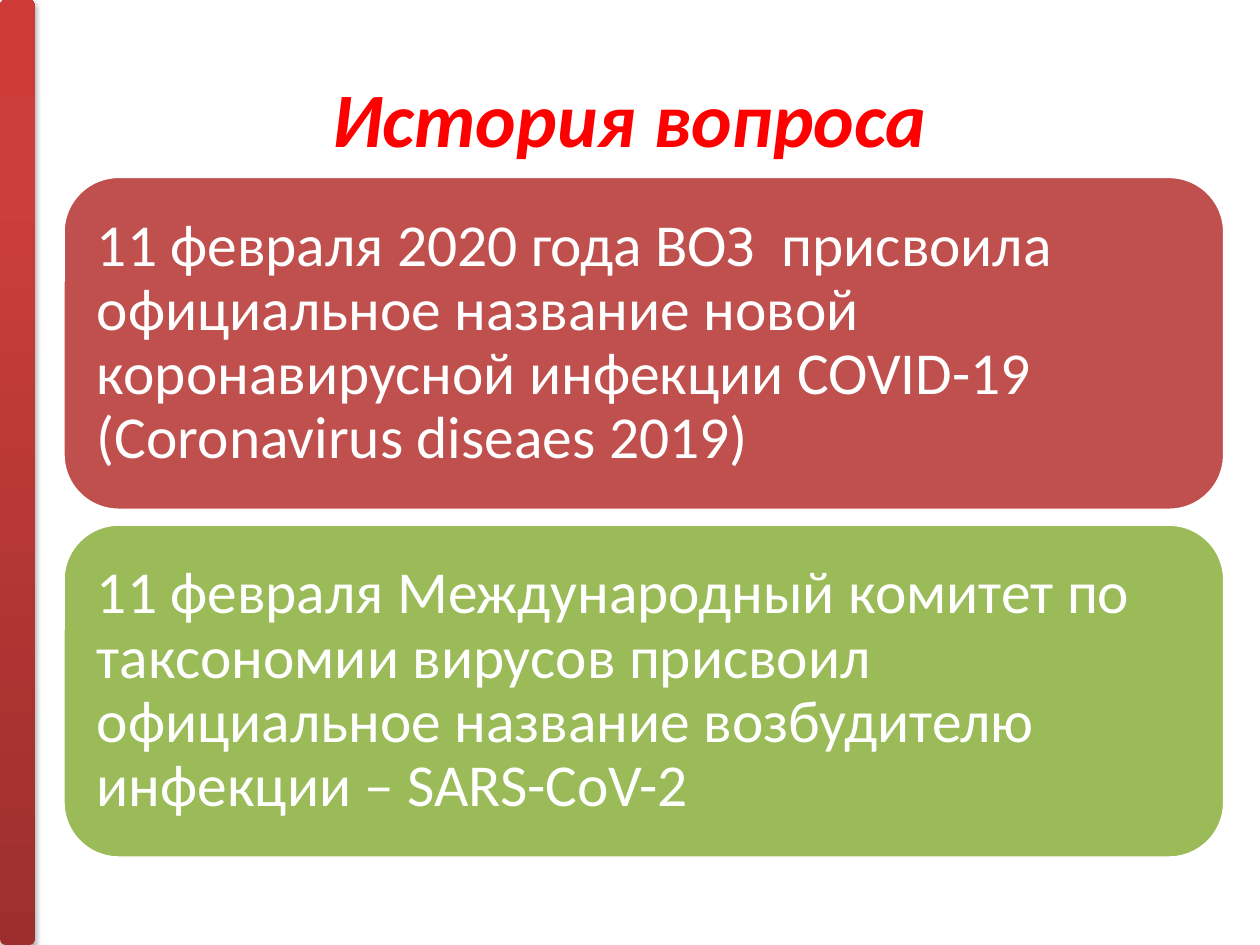
import copy

import lxml.etree
import pptx
import pptx.dml.color
import pptx.enum.shapes
import pptx.enum.text
import pptx.oxml
import pptx.oxml.ns
import pptx.util

WIDE, HIGH = 10, 7.5
FONT = "Calibri"
CARDS = [
    ("C0504D", "11 февраля 2020 года ВОЗ  присвоила официальное название новой "
               "коронавирусной инфекции COVID-19 (Coronavirus diseaes 2019)"),
    ("9BBB59", "11 февраля Международный комитет по таксономии вирусов присвоил "
               "официальное название возбудителю инфекции – SARS-CoV-2"),
]
STOPS = [(0, "9C2F2D"), (0.8, "CB3E3A"), (1, "CE3B37")]
SHADE = (
    '<a:outerShdw xmlns:a="http://schemas.openxmlformats.org/drawingml/2006/main" '
    'blurRad="40000" dist="23000" dir="5400000" rotWithShape="0">'
    '<a:srgbClr val="000000"><a:alpha val="35000"/></a:srgbClr></a:outerShdw>'
)


def tint(code):
    """Turn a hex string into a colour."""
    return pptx.dml.color.RGBColor.from_string(code)


def area(*box):
    """Turn inches into lengths."""
    return [pptx.util.Inches(side) for side in box]


def write(frame, text, size, code, align):
    """Set one wrapped, vertically centred paragraph and return it."""
    frame.word_wrap = True
    frame.vertical_anchor = pptx.enum.text.MSO_ANCHOR.MIDDLE
    para = frame.paragraphs[0]
    para.text = text
    para.alignment = align
    para.font.name = FONT
    para.font.size = pptx.util.Pt(size)
    para.font.color.rgb = tint(code)
    return para


def block(slide, *box):
    """Add a rounded rectangle without a shadow."""
    kind = pptx.enum.shapes.MSO_SHAPE.ROUNDED_RECTANGLE
    shape = slide.shapes.add_shape(kind, *area(*box))
    shape.shadow.inherit = False
    return shape


def title(slide, text):
    """Add the slide's heading."""
    box = slide.shapes.add_textbox(*area(0.5, 0.3, WIDE - 1, 1.25))
    align = pptx.enum.text.PP_ALIGN.CENTER
    para = write(box.text_frame, text, 44, "FF0000", align)
    para.font.bold = para.font.italic = True


def stripe(slide):
    """Add the shaded gradient bar along the left edge."""
    bar = block(slide, 0, 0, 0.28, HIGH)
    bar.line.fill.background()
    bar.fill.gradient()
    bar.fill.gradient_angle = 90
    first = bar._element.spPr.find(".//" + pptx.oxml.ns.qn("a:gs"))
    first.addnext(copy.deepcopy(first))
    for stop, (place, code) in zip(bar.fill.gradient_stops, STOPS):
        stop.position = place
        stop.color.rgb = tint(code)
    effects = bar._element.spPr.find(pptx.oxml.ns.qn("a:effectLst"))
    effects.append(lxml.etree.fromstring(SHADE))


def card(slide, row, code, text):
    """Add a coloured card with its text on the given row."""
    shape = block(slide, 0.5, 1.4 + row * 2.76, 9.22, 2.65)
    shape.fill.solid()
    shape.fill.fore_color.rgb = tint(code)
    shape.line.color.rgb = tint("FFFFFF")
    shape.line.width = pptx.util.Pt(2)
    frame = shape.text_frame
    frame.margin_left = frame.margin_right = pptx.util.Inches(0.14)
    frame.margin_top = frame.margin_bottom = pptx.util.Inches(0.14)
    align = pptx.enum.text.PP_ALIGN.LEFT
    write(frame, text, 34, "FFFFFF", align).line_spacing = 0.9


def main():
    """Build and save the slide."""
    deck = pptx.Presentation()
    deck.slide_width, deck.slide_height = area(WIDE, HIGH)
    slide = deck.slides.add_slide(deck.slide_layouts[6])
    title(slide, "История вопроса")
    stripe(slide)
    for row, (code, text) in enumerate(CARDS):
        card(slide, row, code, text)
    deck.save("out.pptx")


if __name__ == "__main__":
    main()
